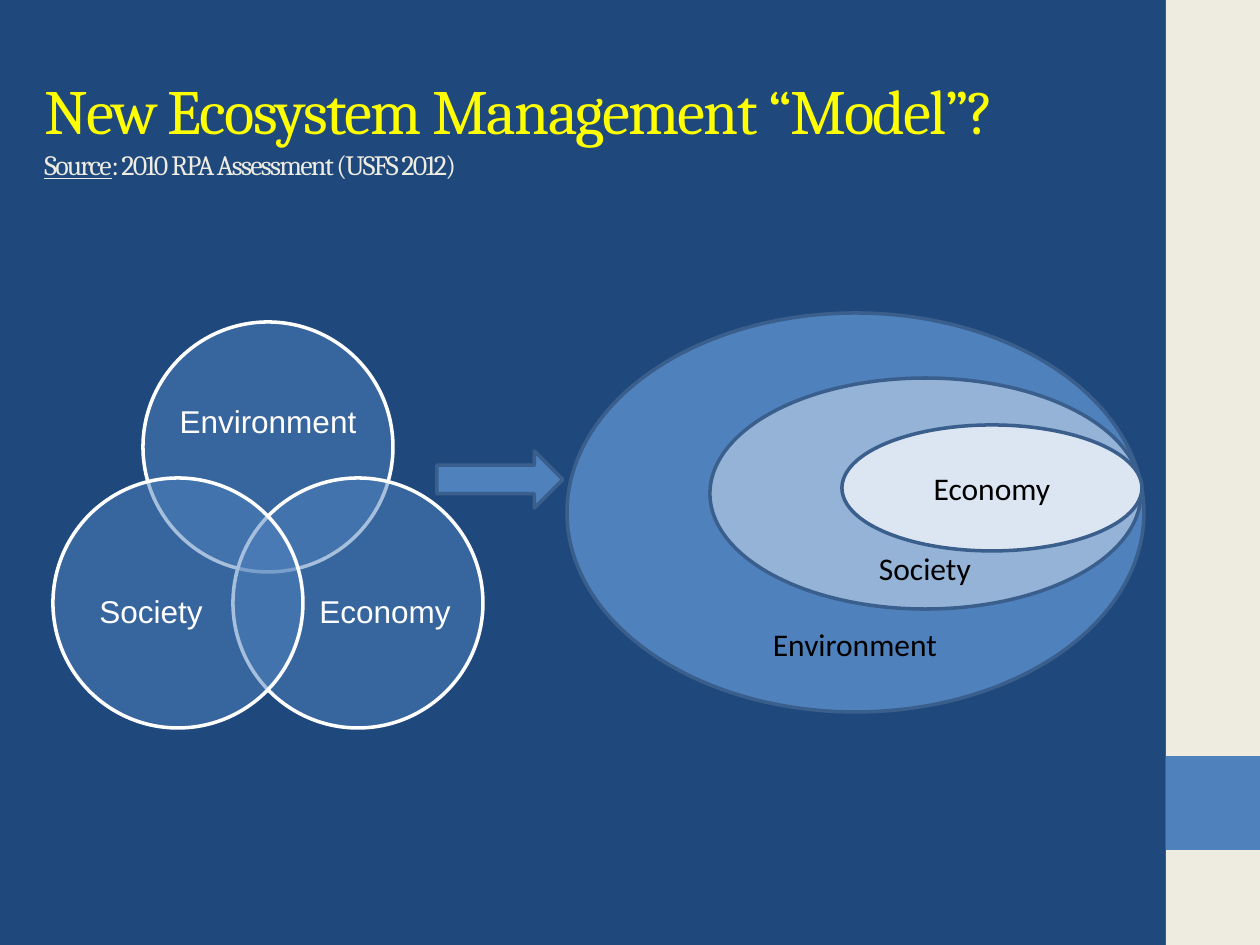
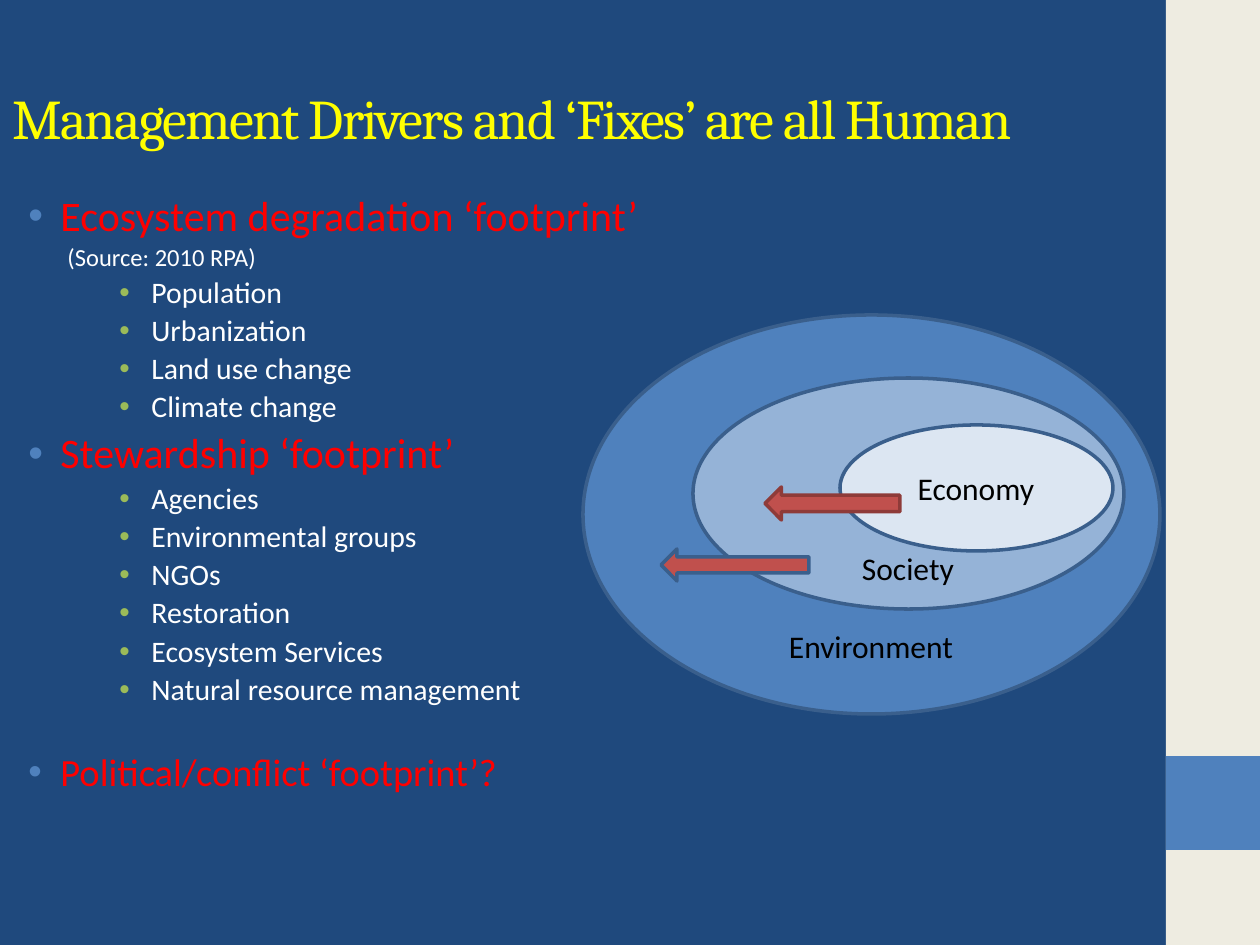
"""Build two slides comparing ecosystem management models and their human drivers."""
from lxml.etree import SubElement
from pptx import Presentation
from pptx.dml.color import RGBColor
from pptx.enum.shapes import MSO_SHAPE as Shape
from pptx.enum.text import MSO_ANCHOR as Anchor, PP_ALIGN as Align
from pptx.oxml.ns import qn
from pptx.util import Pt

PX = 7257
hex_color = RGBColor.from_string

NAVY, CREAM, BLUE, OUTLINE = "1F497D", "EEECE1", "4F81BD", "3A5F8C"
YELLOW, RED, GREEN, WHITE, BLACK = "FFFF00", "FF0000", "9BBB59", "FFFFFF", "000000"
BRICK, DARK_BRICK = "C0504D", "8E3B39"
NESTED = [("Environment", BLUE, 132), ("Society", "95B3D7", 75), ("Economy", "DCE6F2", 0)]


def add_figure(slide, kind, box, fill, line=None):
    shape = slide.shapes.add_shape(kind, *[length * PX for length in box])
    shape.shadow.inherit = False
    shape.fill.solid()
    shape.fill.fore_color.rgb = hex_color(fill)
    if line:
        shape.line.color.rgb = hex_color(line)
        shape.line.width = Pt(2)
    else:
        shape.line.fill.background()
    return shape


def add_run(paragraph, text, name, size, color):
    run = paragraph.add_run()
    run.text = text
    run.font.name = name
    run.font.size = Pt(size)
    run.font.color.rgb = hex_color(color)
    return run


presentation = Presentation()
presentation.slide_width = 1260 * PX
presentation.slide_height = 945 * PX

slides, titles = [], []
for title, size, box in [
    ("New Ecosystem Management “Model”?", 36, (32, 53, 1189, 147)),
    ("Management Drivers and ‘Fixes’ are all Human", 32, (0, 38, 1134, 158)),
]:
    slide = presentation.slides.add_slide(presentation.slide_layouts[6])
    slide.background.fill.solid()
    slide.background.fill.fore_color.rgb = hex_color(NAVY)
    add_figure(slide, Shape.RECTANGLE, (1166, 0, 94, 945), CREAM)
    add_figure(slide, Shape.RECTANGLE, (1166, 756, 94, 94), BLUE)
    frame = slide.shapes.add_textbox(*[length * PX for length in box]).text_frame
    frame.word_wrap = True
    frame.vertical_anchor = Anchor.MIDDLE
    add_run(frame.paragraphs[0], title, "Cambria", size, YELLOW)
    slides.append(slide)
    titles.append(frame.paragraphs[0])

model_slide, drivers_slide = slides
titles[0].add_line_break()
add_run(titles[0], "Source", "Cambria", 16, CREAM).font.underline = True
add_run(titles[0], ": 2010 RPA Assessment (USFS 2012)", "Cambria", 16, CREAM)
for paragraph in titles:
    for run in paragraph.runs:
        run.font._element.set("spc", "-100")

labels = []
add_figure(model_slide, Shape.RIGHT_ARROW, (437, 451, 126, 57), BLUE, OUTLINE)
for name, left, top, label_x, label_y in [
    ("Environment", 143, 322, 268, 421),
    ("Economy", 233, 478, 385, 611),
    ("Society", 53, 478, 151, 611),
]:
    circle = add_figure(model_slide, Shape.OVAL, (left, top, 250, 250), BLUE, WHITE)
    fill_color = circle.fill._xPr.find(qn("a:solidFill"))[0]
    SubElement(fill_color, qn("a:alpha"), val="50000")
    labels.append((model_slide, name, label_x, label_y, "Arial", WHITE))

for slide, boxes in [
    (model_slide, [(567, 313, 577, 399), (710, 378, 431, 231), (842, 425, 300, 126)]),
    (drivers_slide, [(583, 315, 577, 399), (693, 378, 431, 231), (840, 425, 273, 126)]),
]:
    for (name, fill, drop), box in zip(NESTED, boxes):
        add_figure(slide, Shape.OVAL, box, fill, OUTLINE)
        left, top, width, height = box
        center_x, center_y = left + width // 2, top + height // 2
        labels.append((slide, name, center_x, center_y + drop, "Calibri", BLACK))

for slide, name, center_x, center_y, font, color in labels:
    box = (center_x - 95, center_y - 20, 190, 40)
    frame = slide.shapes.add_textbox(*[length * PX for length in box]).text_frame
    frame.word_wrap = True
    frame.vertical_anchor = Anchor.MIDDLE
    frame.margin_left = frame.margin_right = frame.margin_top = frame.margin_bottom = 0
    frame.paragraphs[0].alignment = Align.CENTER
    add_run(frame.paragraphs[0], name, font, 18, color)

add_figure(drivers_slide, Shape.LEFT_ARROW, (765, 487, 135, 33), BRICK, DARK_BRICK)
add_figure(drivers_slide, Shape.LEFT_ARROW, (661, 549, 148, 32), BRICK, OUTLINE)

HEADING = (RED, 48, -32, BLUE)
ITEM = (WHITE, 139, -32, GREEN)
NOTE = (WHITE, 55, 0, None)
outline = [
    ("Ecosystem degradation ‘footprint’", 24, HEADING),
    ("(Source: 2010 RPA)", 14, NOTE),
    *[(text, 17, ITEM) for text in
      ("Population", "Urbanization", "Land use change", "Climate change")],
    ("Stewardship ‘footprint’", 24, HEADING),
    *[(text, 17, ITEM) for text in
      ("Agencies", "Environmental groups", "NGOs", "Restoration",
       "Ecosystem Services", "Natural resource management")],
    ("Political/conflict ‘footprint’?", 22, HEADING),
]
body_box = (0, 189, 766, 655)
frame = drivers_slide.shapes.add_textbox(*[length * PX for length in body_box]).text_frame
frame.word_wrap = True
for index, (text, size, (color, margin, indent, bullet)) in enumerate(outline):
    paragraph = frame.add_paragraph() if index else frame.paragraphs[0]
    paragraph.line_spacing = 0.9
    paragraph.space_before = Pt(size * 0.2)
    add_run(paragraph, text, "Calibri", size, color)
    properties = paragraph._p.get_or_add_pPr()
    properties.set("marL", str(margin * PX))
    properties.set("indent", str(indent * PX))
    if bullet:
        bullet_color = SubElement(properties, qn("a:buClr"))
        SubElement(bullet_color, qn("a:srgbClr"), val=bullet)
        SubElement(properties, qn("a:buFont"), typeface="Arial")
        SubElement(properties, qn("a:buChar"), char="•")
paragraph.space_before = Pt(26.5)

presentation.save("out.pptx")
